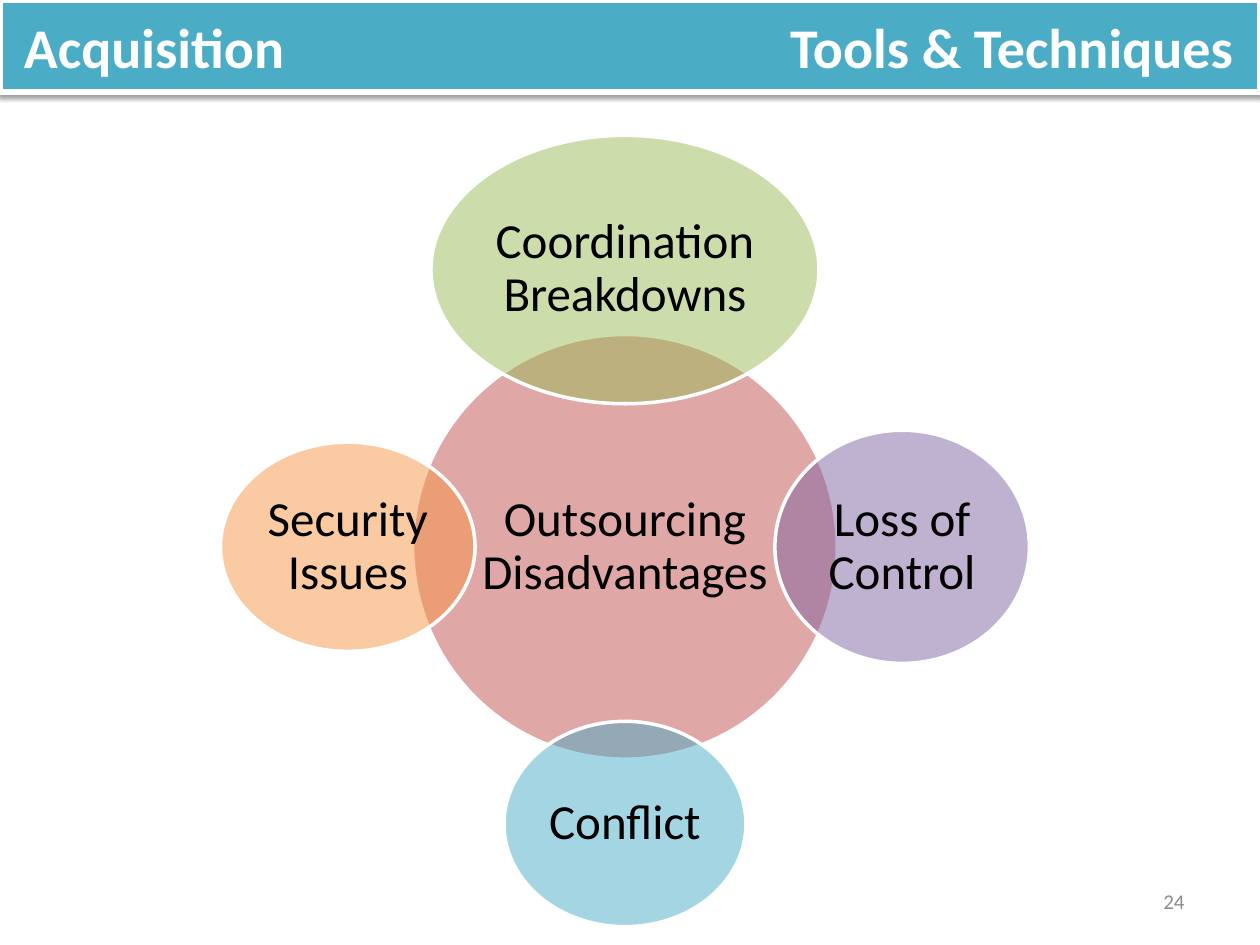
from dataclasses import dataclass
from math import cos, radians, sin

from lxml.etree import SubElement
from pptx import Presentation
from pptx.dml.color import RGBColor
from pptx.enum.shapes import MSO_SHAPE
from pptx.enum.text import MSO_ANCHOR, MSO_AUTO_SIZE, PP_ALIGN
from pptx.oxml.ns import qn
from pptx.util import Inches, Pt


@dataclass(frozen=True)
class Theme:
    font: str = "Calibri"
    white: str = "FFFFFF"
    black: str = "000000"
    grey: str = "8C8C8C"
    red: str = "C0504D"
    green: str = "9BBB59"
    purple: str = "8064A2"
    aqua: str = "4BACC6"
    orange: str = "F79646"
    title_size: int = 32
    label_size: int = 28
    number_size: int = 12


theme = Theme()


def add_run(paragraph, text, size, color, bold=False):
    run = paragraph.add_run()
    run.text = text
    run.font.name = theme.font
    run.font.size = Pt(size)
    run.font.bold = bold
    run.font.color.rgb = RGBColor.from_string(color)


def paint(shape, fill, line_width):
    shape.shadow.inherit = False
    shape.fill.solid()
    shape.fill.fore_color.rgb = RGBColor.from_string(fill)
    shape.line.color.rgb = RGBColor.from_string(theme.white)
    shape.line.width = Pt(line_width)


presentation = Presentation()
presentation.slide_width = Inches(10)
presentation.slide_height = Inches(7.5)
slide = presentation.slides.add_slide(presentation.slide_layouts[5])

# Title bar: left heading, then a right tab for the second heading
title = slide.shapes.title
title.left, title.top = Inches(0), Inches(0)
title.width, title.height = Inches(10), Inches(0.73)
paint(title, theme.aqua, 3)
shadow = SubElement(
    title.element.spPr.find(qn("a:effectLst")), qn("a:outerShdw"),
    blurRad=str(Pt(3.1)), dist=str(Pt(1.6)), dir="5400000", rotWithShape="0")
shadow_color = SubElement(shadow, qn("a:srgbClr"), val=theme.black)
SubElement(shadow_color, qn("a:alpha"), val="38000")

frame = title.text_frame
frame.auto_size = MSO_AUTO_SIZE.NONE
frame.vertical_anchor = MSO_ANCHOR.MIDDLE
frame.margin_left = Inches(0.19)
paragraph = frame.paragraphs[0]
paragraph.alignment = PP_ALIGN.LEFT
tab_list = SubElement(paragraph._p.get_or_add_pPr(), qn("a:tabLst"))
SubElement(tab_list, qn("a:tab"), pos=str(Inches(9.6)), algn="r")
add_run(paragraph, "Acquisition\tTools & Techniques", theme.title_size, theme.white, bold=True)

# Radial diagram: (label, colour, width, height, distance from hub, angle)
hub_x, hub_y, orbit = 4.96, 4.34, 2.2
ellipses = [
    ("Outsourcing Disadvantages", theme.red, 3.37, 3.37, 0, 0),
    ("Coordination Breakdowns", theme.green, 3.08, 2.13, orbit, -90),
    ("Loss of Control", theme.purple, 2.02, 1.85, orbit, 0),
    ("Conflict", theme.aqua, 1.92, 1.63, orbit, 90),
    ("Security Issues", theme.orange, 2.02, 1.66, orbit, 180),
]
diagram = slide.shapes.add_group_shape()
for label, color, width, height, distance, angle in ellipses:
    center_x = hub_x + distance * cos(radians(angle))
    center_y = hub_y + distance * sin(radians(angle))
    ellipse = diagram.shapes.add_shape(
        MSO_SHAPE.OVAL, Inches(center_x - width / 2), Inches(center_y - height / 2),
        Inches(width), Inches(height))
    paint(ellipse, color, 2)
    fill_color = ellipse.element.spPr.find(qn("a:solidFill")).find(qn("a:srgbClr"))
    SubElement(fill_color, qn("a:alpha"), val="50000")

    frame = ellipse.text_frame
    frame.word_wrap = True
    frame.vertical_anchor = MSO_ANCHOR.MIDDLE
    frame.margin_left = frame.margin_right = Inches(0.04)
    frame.margin_top = frame.margin_bottom = Inches(0.04)
    paragraph = frame.paragraphs[0]
    paragraph.alignment = PP_ALIGN.CENTER
    paragraph.line_spacing = 0.9
    add_run(paragraph, label, theme.label_size, theme.black)

# Slide number
number_box = slide.shapes.add_textbox(Inches(7.17), Inches(6.95), Inches(2.33), Inches(0.4))
frame = number_box.text_frame
frame.word_wrap = True
frame.vertical_anchor = MSO_ANCHOR.MIDDLE
paragraph = frame.paragraphs[0]
paragraph.alignment = PP_ALIGN.RIGHT
add_run(paragraph, "24", theme.number_size, theme.grey)

presentation.save("out.pptx")
